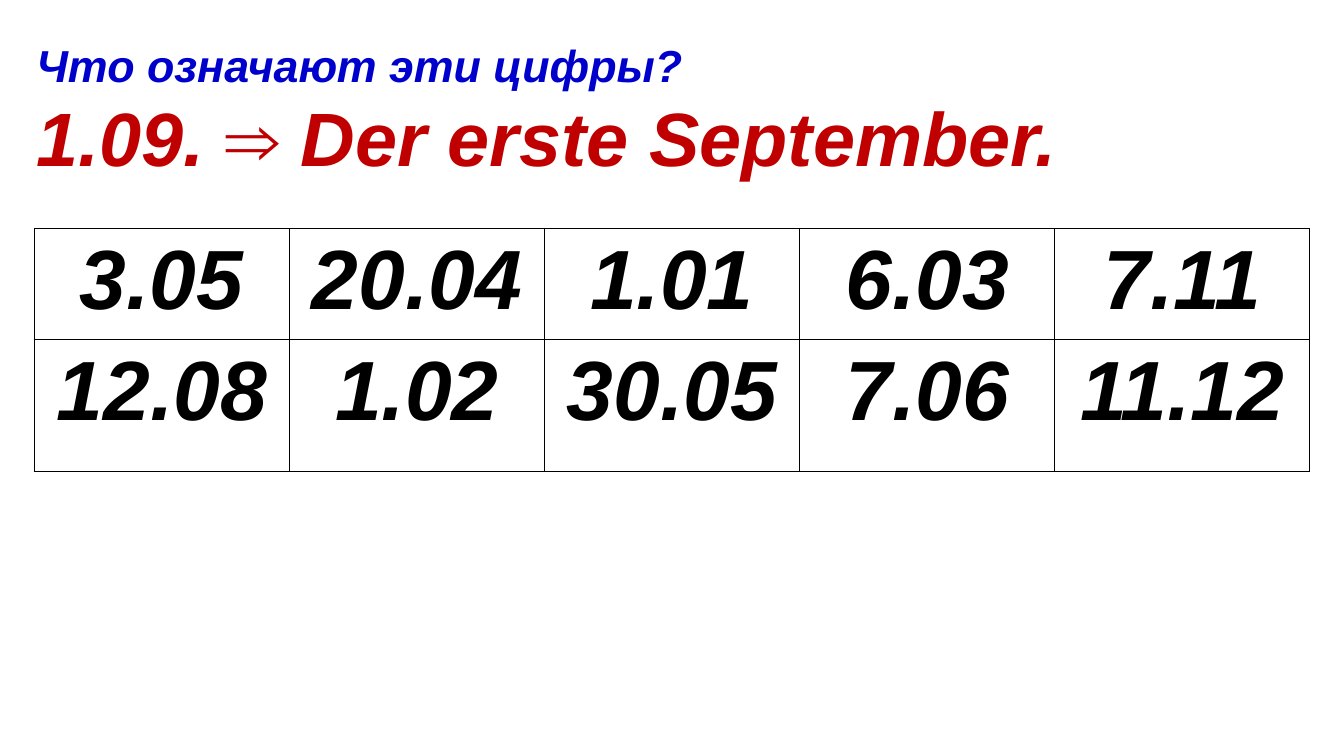
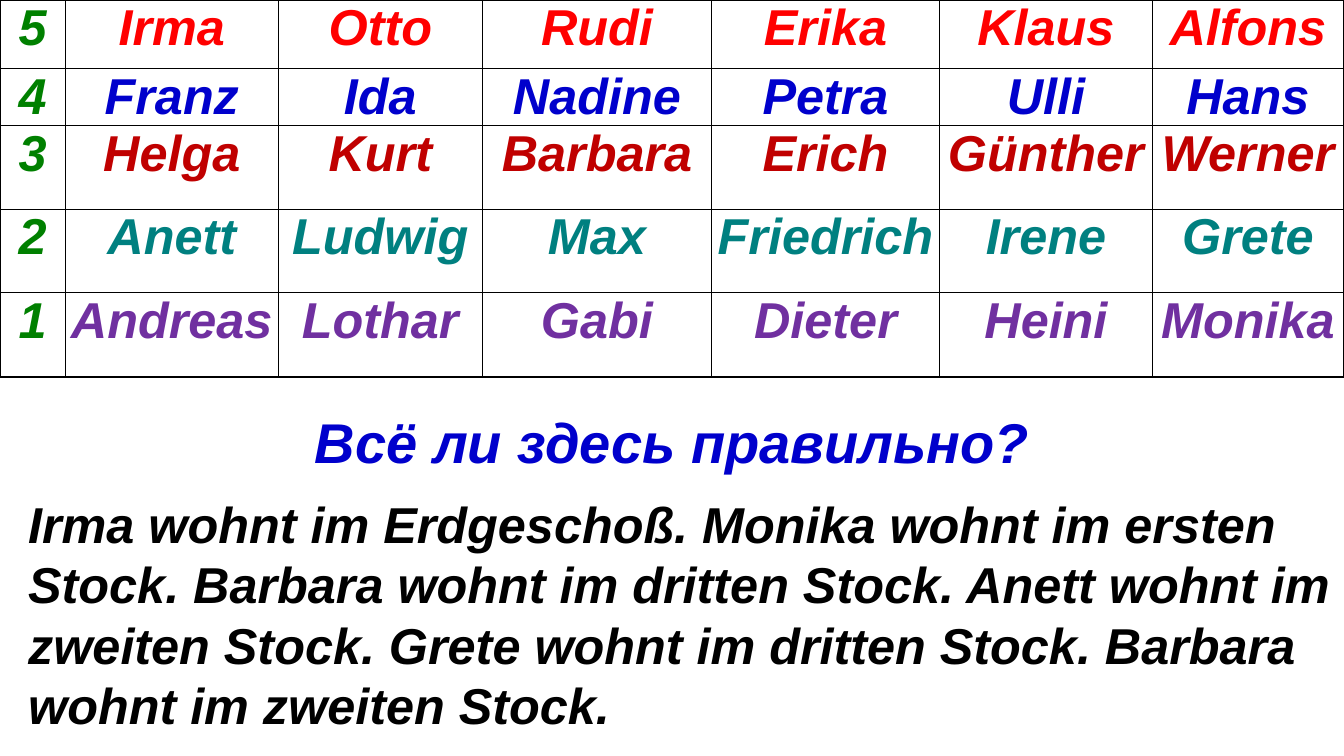
from lxml import etree
from pptx import Presentation
from pptx.dml.color import RGBColor
from pptx.enum.text import MSO_ANCHOR, MSO_AUTO_SIZE, PP_ALIGN
from pptx.oxml.ns import qn
from pptx.util import Cm, Pt

LEFT, CENTER = PP_ALIGN.LEFT, PP_ALIGN.CENTER
TOP, MIDDLE = MSO_ANCHOR.TOP, MSO_ANCHOR.MIDDLE
NO_FIT = MSO_AUTO_SIZE.NONE

BLACK = RGBColor(0x00, 0x00, 0x00)
BLUE = RGBColor(0x00, 0x00, 0xCC)
DARK_RED = RGBColor(0xC0, 0x00, 0x00)
RED = RGBColor(0xFF, 0x00, 0x00)
GREEN = RGBColor(0x00, 0x80, 0x00)
TEAL = RGBColor(0x00, 0x80, 0x80)
PURPLE = RGBColor(0x70, 0x30, 0xA0)

SLIDE_W, SLIDE_H = 33.87, 19.05
FONT = {"name": "Arial", "bold": True, "italic": True}
THIN, THICK = 1, 1.5

DATES_TITLE = [
    [("Что означают эти цифры?", 32, BLUE, True)],
    [("1.09. ", 54, DARK_RED, True), ("⇒", 54, DARK_RED, False),
     (" Der erste September.", 54, DARK_RED, True)],
]
DATES = [
    ["3.05", "20.04", "1.01", "6.03", "7.11"],
    ["12.08", "1.02", "30.05", "7.06", "11.12"],
]
DATE_COLS = [6.43] * 5
DATE_ROWS = [2.79, 3.33]

FLOORS = [
    (RED, ["Irma", "Otto", "Rudi", "Erika", "Klaus", "Alfons"]),
    (BLUE, ["Franz", "Ida", "Nadine", "Petra", "Ulli", "Hans"]),
    (DARK_RED, ["Helga", "Kurt", "Barbara", "Erich", "Günther", "Werner"]),
    (TEAL, ["Anett", "Ludwig", "Max", "Friedrich", "Irene", "Grete"]),
    (PURPLE, ["Andreas", "Lothar", "Gabi", "Dieter", "Heini", "Monika"]),
]
FLOOR_COLS = [1.65, 5.36, 5.15, 5.77, 5.75, 5.36, 4.82]
FLOOR_ROWS = [1.73, 1.43, 2.11, 2.11, 2.11]
FLOORS_TITLE = [[("Всё ли здесь правильно?", 40, BLUE, True)]]
STATEMENTS = [[(
    "Irma wohnt im Erdgeschoß. Monika wohnt im ersten Stock. "
    "Barbara wohnt im dritten Stock. Anett wohnt im zweiten Stock. "
    "Grete wohnt im dritten Stock. Barbara wohnt im zweiten Stock.",
    36, BLACK, True)]]


def write(tf, paragraphs, align):
    for i, runs in enumerate(paragraphs):
        p = tf.paragraphs[0] if i == 0 else tf.add_paragraph()
        p.alignment = align
        for text, size, color, italic in runs:
            r = p.add_run()
            r.text = text
            for name, value in {**FONT, "size": Pt(size), "italic": italic}.items():
                setattr(r.font, name, value)
            r.font.color.rgb = color


def fill_box(sp, box, paragraphs, align, anchor):
    for name, value in zip(("left", "top", "width", "height"), box):
        setattr(sp, name, Cm(value))
    tf = sp.text_frame
    for name, value in {"word_wrap": True, "auto_size": NO_FIT,
                        "vertical_anchor": anchor}.items():
        setattr(tf, name, value)
    write(tf, paragraphs, align)


def add_titled_slide(prs, box, paragraphs, align):
    s = prs.slides.add_slide(prs.slide_layouts[5])
    fill_box(s.shapes.title, box, paragraphs, align, MIDDLE)
    return s


def set_borders(cell, widths):
    tc_pr = cell._tc.get_or_add_tcPr()
    for i, (side, width) in enumerate(widths.items()):
        ln = etree.Element(qn("a:ln" + side), w=str(Pt(width)))
        fill = etree.SubElement(ln, qn("a:solidFill"))
        etree.SubElement(fill, qn("a:srgbClr"), val=str(BLACK))
        tc_pr.insert(i, ln)


def add_grid(s, left, top, cols, rows, cells, size, margins, outer):
    table = s.shapes.add_table(len(rows), len(cols), Cm(left), Cm(top),
                               Cm(sum(cols)), Cm(sum(rows))).table
    table.first_row = table.horz_banding = False
    for column, width in zip(table.columns, cols):
        column.width = Cm(width)
    for i, height in enumerate(rows):
        table.rows[i].height = Cm(height)
        for j, (text, color) in enumerate(cells[i]):
            cell = table.cell(i, j)
            cell.fill.background()
            cell.margin_left = cell.margin_right = Cm(margins[0])
            cell.margin_top = cell.margin_bottom = Cm(margins[1])
            write(cell.text_frame, [[(text, size, color, True)]], CENTER)
            set_borders(cell, {
                "L": outer if j == 0 else THIN,
                "R": outer if j == len(cols) - 1 else THIN,
                "T": outer if i == 0 else THIN,
                "B": outer if i == len(rows) - 1 else THIN,
            })


def build_dates(prs):
    s = add_titled_slide(prs, (0.66, 0.79, 33.2, 3.94), DATES_TITLE, LEFT)
    cells = [[(date, BLACK) for date in row] for row in DATES]
    add_grid(s, 0.86, 5.76, DATE_COLS, DATE_ROWS, cells, 60, (0.25, 0.13), THIN)


def build_floors(prs):
    s = add_titled_slide(prs, (0, 10.13, SLIDE_W, 1.96), FLOORS_TITLE, CENTER)
    cells = [[(str(len(FLOORS) - i), GREEN)] + [(name, color) for name in names]
             for i, (color, names) in enumerate(FLOORS)]
    add_grid(s, 0, 0, FLOOR_COLS, FLOOR_ROWS, cells, 36, (0.12, 0), THICK)
    sp = s.shapes.add_textbox(0, 0, 0, 0)
    fill_box(sp, (0.46, 12.3, 33.4, 6.4), STATEMENTS, LEFT, TOP)


def main():
    prs = Presentation()
    prs.slide_width, prs.slide_height = Cm(SLIDE_W), Cm(SLIDE_H)
    build_dates(prs)
    build_floors(prs)
    prs.save("out.pptx")


if __name__ == "__main__":
    main()
